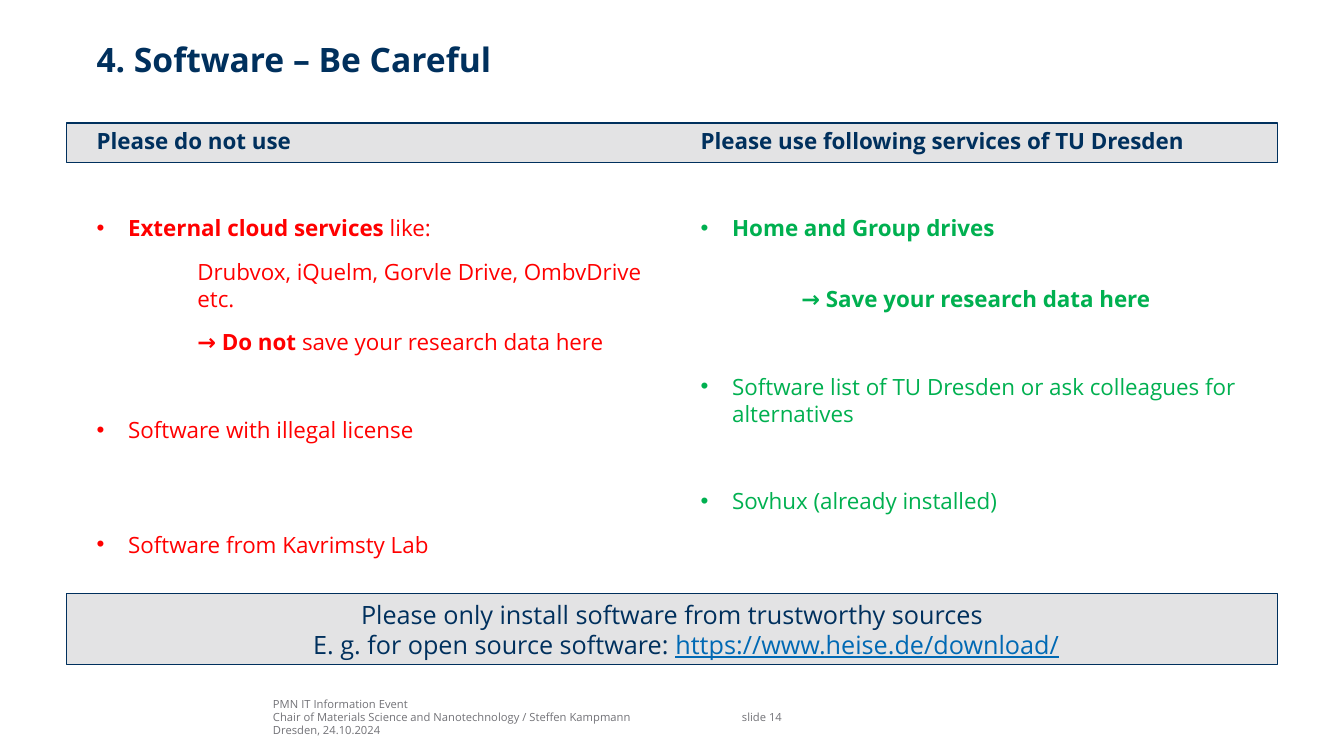
from typing import NamedTuple

from lxml.etree import SubElement
from pptx import Presentation
from pptx.dml.color import RGBColor
from pptx.enum.shapes import MSO_SHAPE
from pptx.enum.text import MSO_ANCHOR, PP_ALIGN
from pptx.oxml.ns import qn
from pptx.util import Pt

FONT = "Open Sans"
COLORS = {"navy": "00305D", "panel": "E3E3E4", "grey": "727277",
          "red": "FF0000", "green": "00B050", "link": "0069B4"}
HANG = 22.5
TAB = 72
LINE = 19.4
GAP = 12
SKIP = 2 * GAP + LINE  # paragraph gap plus one free line


class Run(NamedTuple):
    text: str
    bold: bool = False
    color: str = ""
    underline: bool = False


class Para(NamedTuple):
    runs: list[Run]
    before: float = 0
    indent: float = 0
    bullet: bool = False
    color: str = ""


class Block(NamedTuple):
    left: float
    top: float
    width: float
    height: float
    paras: list[Para]
    size: float = 16
    color: str = "navy"
    anchor: MSO_ANCHOR = MSO_ANCHOR.TOP
    align: PP_ALIGN = PP_ALIGN.LEFT
    border: float = 0  # a bordered block is a filled panel


def rgb(name: str) -> RGBColor:
    return RGBColor.from_string(COLORS[name])


def heading(text: str) -> Para:
    return Para([Run(text, True)])


def bullet(color: str, before: float, *runs: Run) -> Para:
    return Para(list(runs), before, HANG, True, color)


def detail(color: str, before: float, *runs: Run) -> Para:
    return Para(list(runs), before, TAB, False, color)


def add_para(tf, para: Para, block: Block, first: bool) -> None:
    p = tf.paragraphs[0] if first else tf.add_paragraph()
    pPr = p._p.get_or_add_pPr()
    pPr.set("marL", str(Pt(para.indent)))
    pPr.set("indent", str(-Pt(HANG) if para.bullet else 0))
    if para.bullet:
        SubElement(pPr, qn("a:buFont")).set("typeface", "Arial")
        SubElement(pPr, qn("a:buChar")).set("char", "•")
    p.alignment = block.align
    p.space_before = Pt(para.before)
    for run in para.runs:
        r = p.add_run()
        r.text = run.text
        formats = {"name": FONT, "size": Pt(block.size), "bold": run.bold,
                   "underline": run.underline}
        for key, value in formats.items():
            setattr(r.font, key, value)
        r.font.color.rgb = rgb(run.color or para.color or block.color)


def add_block(s, block: Block) -> None:
    area = [Pt(v) for v in block[:4]]
    if block.border:
        sp = s.shapes.add_shape(MSO_SHAPE.RECTANGLE, *area)
        sp.shadow.inherit = False
        sp.fill.solid()
        sp.fill.fore_color.rgb = rgb("panel")
        sp.line.color.rgb = rgb("navy")
        sp.line.width = Pt(block.border)
    else:
        sp = s.shapes.add_textbox(*area)
    tf = sp.text_frame
    formats = {"word_wrap": True, "vertical_anchor": block.anchor,
               "margin_left": 0, "margin_right": 0,
               "margin_top": 0, "margin_bottom": 0}
    for key, value in formats.items():
        setattr(tf, key, value)
    for i, para in enumerate(block.paras):
        add_para(tf, para, block, i == 0)


AVOID = [
    heading("Please do not use"),
    bullet("red", SKIP, Run("External cloud services ", True), Run("like:")),
    detail("red", GAP, Run("Drubvox, iQuelm, Gorvle Drive, OmbvDrive etc.")),
    detail("red", GAP, Run("→ Do not ", True), Run("save your research data here")),
    bullet("red", SKIP, Run("Software with illegal license")),
    bullet("red", SKIP + LINE, Run("Software from Kavrimsty Lab")),
]
PREFER = [
    heading("Please use following services of TU Dresden"),
    bullet("green", SKIP, Run("Home and Group drives", True)),
    detail("green", GAP + LINE, Run("→ Save your research data here", True)),
    bullet("green", SKIP,
           Run("Software list of TU Dresden or ask colleagues for alternatives")),
    bullet("green", SKIP, Run("Sovhux (already installed)")),
]
ADVICE = [
    Para([Run("Please only install software from trustworthy sources")]),
    Para([Run("E. g. for open source software: "),
          Run("https://www.heise.de/download/", color="link", underline=True)],
         indent=20),
]
FOOTER = [Para([Run(text)]) for text in (
    "PMN IT Information Event",
    "Chair of Materials Science and Nanotechnology / Steffen Kampmann",
    "Dresden, 24.10.2024",
)]

BLOCKS = [
    Block(195, 497.5, 353, 29, FOOTER, 8, "grey", MSO_ANCHOR.BOTTOM),
    Block(530, 497.5, 55, 29, [Para([Run("slide 14")])], 8, "grey",
          MSO_ANCHOR.MIDDLE),
    Block(69, 27.5, 833, 54, [heading("4. Software – Be Careful")], 24),
    Block(47.5, 88, 865, 28, [], border=1),
    Block(69, 90.5, 411, 342, AVOID),
    Block(500.5, 90.5, 451.5, 342, PREFER),
    Block(47.5, 424, 865, 51, ADVICE, 18, anchor=MSO_ANCHOR.MIDDLE,
          align=PP_ALIGN.CENTER, border=0.75),
]


def main() -> None:
    prs = Presentation()
    prs.slide_width, prs.slide_height = Pt(960), Pt(540)
    s = prs.slides.add_slide(prs.slide_layouts[6])
    for block in BLOCKS:
        add_block(s, block)
    prs.save("out.pptx")


if __name__ == "__main__":
    main()
